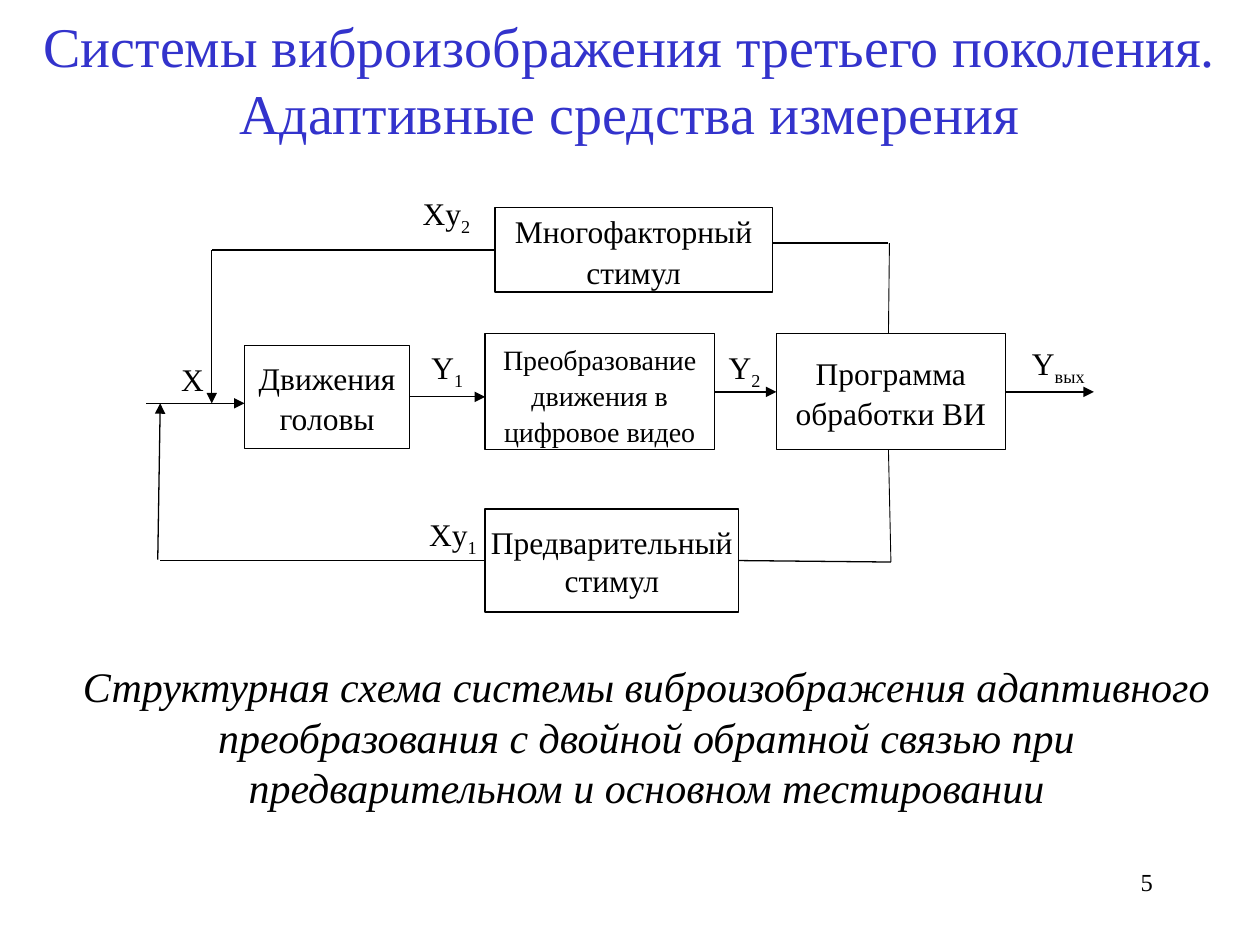
from lxml import etree
from pptx import Presentation
from pptx.dml.color import RGBColor
from pptx.enum.shapes import MSO_CONNECTOR as CONN, MSO_SHAPE as SHAPE
from pptx.enum.text import MSO_ANCHOR as ANCHOR, MSO_AUTO_SIZE as AUTO, PP_ALIGN as ALIGN
from pptx.oxml.ns import qn
from pptx.util import Cm, Pt

FONT = "Times New Roman"
BLACK, WHITE, BLUE = "000000", "FFFFFF", "3333CC"
TOP, LEFT, RIGHT = 0, 1, 3
LABEL_SPACING = 1.07


def rgb(value):
    return RGBColor.from_string(value)


def add_run(p, text, size, color=BLACK, italic=None, subscript=False):
    r = p.add_run()
    r.text = text
    style = {"name": FONT, "size": Pt(size), "italic": italic}
    for name, value in style.items():
        setattr(r.font, name, value)
    r.font.color.rgb = rgb(color)
    if subscript:
        r.font._element.set("baseline", "-25000")


def fill_text(sp, paragraphs, size, anchor=ANCHOR.TOP, align=ALIGN.CENTER,
              spacing=None, side=0.25, **style):
    """Each paragraph is a (text, subscript) pair."""
    tf = sp.text_frame
    frame = {"word_wrap": True, "vertical_anchor": anchor,
             "margin_left": Cm(side), "margin_right": Cm(side)}
    for name, value in frame.items():
        setattr(tf, name, value)
    for i, (text, sub) in enumerate(paragraphs):
        p = tf.add_paragraph() if i else tf.paragraphs[0]
        p.alignment = align
        if spacing:
            p.line_spacing = spacing
        add_run(p, text, size, **style)
        if sub:
            add_run(p, sub, size, subscript=True, **style)


def add_text(s, place, text, size, sub="", **options):
    sp = s.shapes.add_textbox(*map(Cm, place))
    fill_text(sp, [(text, sub)], size, **options)
    return sp


def add_block(s, place, lines, size=18, anchor=ANCHOR.MIDDLE,
              spacing=LABEL_SPACING, **options):
    sp = s.shapes.add_shape(SHAPE.RECTANGLE, *map(Cm, place))
    sp.shadow.inherit = False
    sp.fill.solid()
    sp.fill.fore_color.rgb = rgb(WHITE)
    sp.line.color.rgb = rgb(BLACK)
    sp.line.width = Pt(0.75)
    fill_text(sp, [(line, "") for line in lines], size, anchor,
              spacing=spacing, **options)
    return sp


def add_line(s, start, end, arrow=False, width=0.75, begin=None, finish=None):
    """begin and finish are (block, side) pairs to join."""
    c = s.shapes.add_connector(CONN.STRAIGHT, *map(Cm, (*start, *end)))
    c.line.color.rgb = rgb(BLACK)
    c.line.width = Pt(width)
    if arrow:
        etree.SubElement(c.line._get_or_add_ln(), qn("a:tailEnd"), type="triangle")
    etree.SubElement(c._element.spPr, qn("a:effectLst"))
    if begin:
        c.begin_connect(*begin)
    if finish:
        c.end_connect(*finish)


def add_diagram(s):
    # Blocks
    head = add_block(s, (4.93, 6.96, 3.33, 2.08), ["Движения головы"])
    video = add_block(s, (9.78, 6.73, 4.62, 2.34),
                      ["Преобразование движения в цифровое видео"],
                      size=16, anchor=ANCHOR.TOP)
    program = add_block(s, (15.65, 6.73, 4.62, 2.34), ["Программа обработки ВИ"])
    prelim = add_block(s, (9.78, 10.26, 5.11, 2.08), ["Предварительный стимул"],
                       spacing=None, side=0.1)
    multi = add_block(s, (9.98, 4.19, 5.59, 1.7), ["Многофакторный", "стимул"])

    # Signal labels
    labels = [
        ((8.1, 3.51, 1.8, 1.4), "Xy", "2", ANCHOR.BOTTOM),
        ((3.23, 6.55, 1.3, 1.6), "X", "", ANCHOR.BOTTOM),
        ((8.26, 6.96, 1.52, 1.04), "Y", "1", ANCHOR.BOTTOM),
        ((14.25, 6.83, 1.52, 1.17), "Y", "2", ANCHOR.TOP),
        ((8.28, 10.01, 1.7, 1.37), "Xy", "1", ANCHOR.BOTTOM),
        ((20.27, 6.76, 2.13, 1.37), "Y", "вых", ANCHOR.TOP),
    ]
    for place, text, sub, anchor in labels:
        add_text(s, place, text, 18, sub, anchor=anchor, spacing=LABEL_SPACING)

    # Main signal chain
    add_line(s, (2.95, 8.13), (4.93, 8.13), arrow=True)
    add_line(s, (8.26, 8), (9.78, 8), arrow=True, begin=(head, RIGHT))
    add_line(s, (14.4, 7.9), (15.65, 7.9), arrow=True,
             begin=(video, RIGHT), finish=(program, LEFT))
    add_line(s, (20.27, 7.9), (22.05, 7.9), arrow=True, begin=(program, RIGHT))

    # Upper feedback loop
    add_line(s, (17.91, 6.73), (17.93, 4.9), width=0.5)
    add_line(s, (17.91, 4.9), (15.57, 4.9))
    add_line(s, (9.98, 5.04), (4.27, 5.04), begin=(multi, LEFT))
    add_line(s, (4.27, 5.04), (4.27, 8.13), arrow=True)

    # Lower feedback loop
    add_line(s, (17.91, 9.07), (17.96, 11.33), width=0.5)
    add_line(s, (17.96, 11.33), (14.89, 11.3), finish=(prelim, RIGHT))
    add_line(s, (9.78, 11.3), (3.23, 11.3), begin=(prelim, LEFT))
    add_line(s, (3.18, 11.28), (3.23, 8.13), arrow=True)


def main():
    prs = Presentation()
    prs.slide_width, prs.slide_height = Cm(25.4), Cm(19.05)
    s = prs.slides.add_slide(prs.slide_layouts[6])

    # Title and page number
    add_text(s, (0.28, 0.1, 24.84, 3.18),
             "Системы виброизображения третьего поколения. "
             "Адаптивные средства измерения", 32, color=BLUE)
    add_text(s, (18.21, 17.35, 5.28, 1.27), "5", 14, align=ALIGN.RIGHT)

    add_diagram(s)

    # Caption
    caption = add_text(s, (0.94, 13.18, 24.18, 3.33),
                       "Структурная схема системы виброизображения адаптивного "
                       "преобразования с двойной обратной связью при "
                       "предварительном и основном тестировании",
                       24, anchor=ANCHOR.MIDDLE, italic=True)
    caption.text_frame.auto_size = AUTO.SHAPE_TO_FIT_TEXT

    prs.save("out.pptx")


if __name__ == "__main__":
    main()
